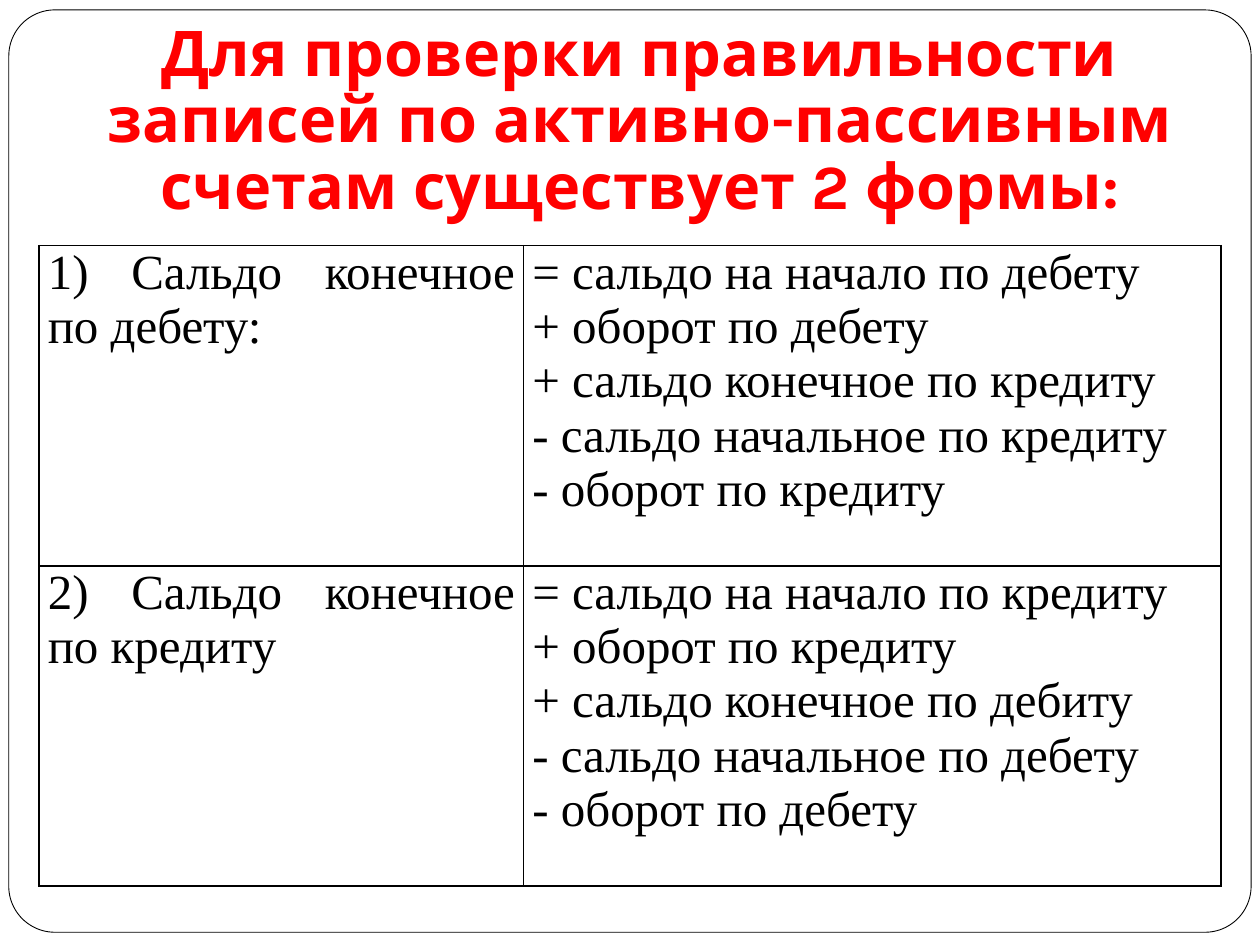
"""Build a slide with the two check formulas for active-passive accounts."""
from lxml import etree
from pptx import Presentation
from pptx import util as u
from pptx.dml.color import RGBColor
from pptx.enum import shapes, text
from pptx.oxml.ns import qn

COLORS = {"paper": "FFFFFF", "ink": "000000", "heading": "FF0000"}
HEADING = "Для проверки правильности записей по активно-пассивным счетам существует 2 формы:"
FORMULAS = [
    ("1) Сальдо конечное по дебету:",
     "= сальдо на начало по дебету\n+ оборот по дебету\n+ сальдо конечное по кредиту\n"
     "- сальдо начальное по кредиту\n- оборот по кредиту"),
    ("2) Сальдо конечное по кредиту",
     "= сальдо на начало по кредиту\n+ оборот по кредиту\n+ сальдо конечное по дебиту\n"
     "- сальдо начальное по дебету\n- оборот по дебету"),
]


class Board:
    """Style and current slide; boxes are given in hundredths of the slide's size."""

    def __init__(self, deck):
        self.unit_x, self.unit_y = deck.slide_width / 100, deck.slide_height / 100
        self.slide = deck.slides.add_slide(deck.slide_layouts[5])

    def color(self, name):
        return RGBColor.from_string(COLORS[name])

    def box(self, left, top, width, height):
        return (u.Emu(round(left * self.unit_x)), u.Emu(round(top * self.unit_y)),
                u.Emu(round(width * self.unit_x)), u.Emu(round(height * self.unit_y)))

    def fill_text(self, frame, content, align, face, size, color, bold=False):
        frame.text = content
        for paragraph in frame.paragraphs:
            paragraph.alignment = align
            for run in paragraph.runs:
                run.font.name, run.font.size, run.font.bold = face, u.Pt(size), bold
                run.font.color.rgb = self.color(color)

    def frame(self, *place):
        border = self.slide.shapes.add_shape(
            shapes.MSO_SHAPE.ROUNDED_RECTANGLE, *self.box(*place))
        border.adjustments[0] = 0.05
        border.shadow.inherit = False
        border.fill.solid()
        border.fill.fore_color.rgb = self.color("paper")
        border.line.color.rgb = self.color("ink")
        border.line.width = u.Pt(0.5)
        self.slide.shapes.element.insert(2, border.element)

    def title(self, content, *place):
        heading = self.slide.shapes.title
        heading.left, heading.top, heading.width, heading.height = self.box(*place)
        body = heading.text_frame
        body.word_wrap = True
        body.auto_size = text.MSO_AUTO_SIZE.NONE
        body.vertical_anchor = text.MSO_ANCHOR.BOTTOM
        body.margin_left = body.margin_right = body.margin_bottom = u.Inches(0.1)
        body.margin_top = u.Inches(0.05)
        self.fill_text(body, content, text.PP_ALIGN.CENTER, "Karla", 36, "heading", True)
        body.paragraphs[0].line_spacing = 0.88

    def outline(self, cell):
        properties = cell._tc.get_or_add_tcPr()
        for position, side in enumerate(("lnL", "lnR", "lnT", "lnB")):
            edge = etree.Element(qn(f"a:{side}"), w=str(u.Pt(1)))
            fill = etree.SubElement(edge, qn("a:solidFill"))
            etree.SubElement(fill, qn("a:srgbClr"), val=COLORS["ink"])
            properties.insert(position, edge)

    def table(self, rows, shares, *place):
        left, top, width, height = self.box(*place)
        grid = self.slide.shapes.add_table(
            len(rows), len(shares), left, top, width, height).table
        grid.first_row = grid.horz_banding = False
        for column, share in zip(grid.columns, shares):
            column.width = u.Emu(round(width * share))
        for r, row in enumerate(rows):
            for c, content in enumerate(row):
                cell = grid.cell(r, c)
                cell.fill.background()
                cell.margin_left = cell.margin_right = u.Inches(0.07)
                cell.margin_top = cell.margin_bottom = 0
                self.fill_text(cell.text_frame, content, text.PP_ALIGN.JUSTIFY,
                               "Times New Roman", 28, "ink")
                self.outline(cell)


def main():
    deck = Presentation()
    deck.slide_width, deck.slide_height = u.Inches(10), u.Inches(7.5)
    board = Board(deck)
    board.frame(0.7, 1.05, 98.6, 97.6)
    board.title(HEADING, 1.6, 0, 98.4, 24.9)
    board.table(FORMULAS, (0.41, 0.59), 3.1, 26, 93.8, 67.75)
    deck.save("out.pptx")


if __name__ == "__main__":
    main()
